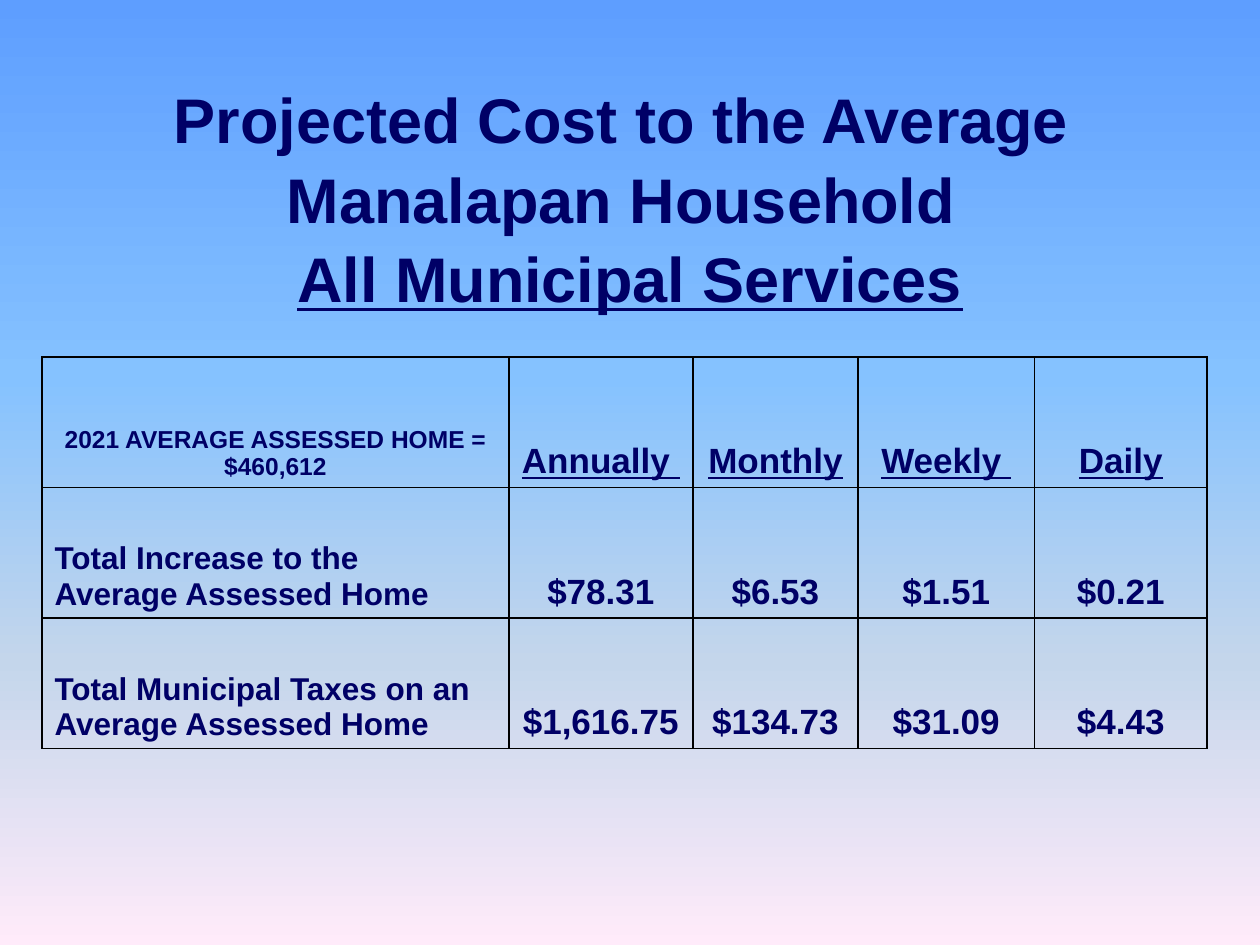
from lxml.etree import SubElement
from pptx import Presentation
from pptx.dml.color import RGBColor
from pptx.enum.text import MSO_ANCHOR as Anchor, PP_ALIGN as Align
from pptx.oxml.ns import qn
from pptx.util import Pt

FONT = "Arial"
NAVY = "000066"
BLACK = "000000"
STOPS = [(0, "5E9EFF"), (40, "85C2FF"), (70, "C4D6EB"), (100, "FFEBFA")]
TITLE = [
    ("Projected Cost to the Average ", False),
    ("Manalapan Household ", False),
    ("All Municipal Services", True),
]
HOME = "2021 AVERAGE ASSESSED HOME = $460,612"
PERIODS = ["Annually ", "Monthly", "Weekly ", "Daily"]
COSTS = [
    (["Total Increase to the", "Average Assessed Home"],
     ["$78.31", "$6.53", "$1.51", "$0.21"]),
    (["Total Municipal Taxes on an", "Average Assessed Home"],
     ["$1,616.75", "$134.73", "$31.09", "$4.43"]),
]
COL_WIDTHS = [266.8, 105.1, 94.5, 100.7, 98.8]
ROW_HEIGHT = 74.6


def rgb(color):
    return RGBColor.from_string(color)


def add_run(p, text, size, underline=False):
    r = p.add_run()
    r.text = text
    r.font.name = FONT
    r.font.size = Pt(size)
    r.font.bold = True
    r.font.underline = underline
    r.font.color.rgb = rgb(NAVY)


def add_paragraphs(tf, lines, size, align=Align.CENTER):
    for i, (text, underline) in enumerate(lines):
        p = tf.add_paragraph() if i else tf.paragraphs[0]
        p.alignment = align
        add_run(p, text, size, underline)


def set_background(s):
    fill = s.background.fill
    fill.gradient()
    fill.gradient_angle = 270
    stops = s.element.find(".//" + qn("a:gsLst"))
    for old in list(stops):
        stops.remove(old)
    for pos, color in STOPS:
        gs = SubElement(stops, qn("a:gs"), pos=str(pos * 1000))
        SubElement(gs, qn("a:srgbClr"), val=color)


def add_title(s):
    sp = s.shapes.add_textbox(Pt(36), Pt(45), Pt(648), Pt(134))
    tf = sp.text_frame
    tf.word_wrap = True
    tf.vertical_anchor = Anchor.MIDDLE
    add_paragraphs(tf, TITLE, 36)
    for p in tf.paragraphs:
        p.line_spacing = 1.05


def set_borders(cell):
    tc_pr = cell._tc.get_or_add_tcPr()
    for i, side in enumerate(("lnL", "lnR", "lnT", "lnB")):
        ln = tc_pr.makeelement(qn("a:" + side), {"w": str(Pt(1))})
        fill = SubElement(ln, qn("a:solidFill"))
        SubElement(fill, qn("a:srgbClr"), val=BLACK)
        tc_pr.insert(i, ln)


def fill_cell(cell, lines, size, align=Align.CENTER, underline=False):
    cell.vertical_anchor = Anchor.BOTTOM
    cell.fill.background()
    set_borders(cell)
    add_paragraphs(cell.text_frame, [(t, underline) for t in lines], size, align)


def add_cost_table(s):
    n_rows = len(COSTS) + 1
    frame = s.shapes.add_table(n_rows, len(COL_WIDTHS), Pt(24), Pt(204),
                               Pt(sum(COL_WIDTHS)), Pt(n_rows * ROW_HEIGHT))
    table = frame.table
    table.first_row = False
    table.horz_banding = False
    for col, width in zip(table.columns, COL_WIDTHS):
        col.width = Pt(width)
    for row in table.rows:
        row.height = Pt(ROW_HEIGHT)

    fill_cell(table.cell(0, 0), [HOME], 14)
    for j, period in enumerate(PERIODS, 1):
        fill_cell(table.cell(0, j), [period], 20, underline=True)
    for i, (label, amounts) in enumerate(COSTS, 1):
        fill_cell(table.cell(i, 0), label, 18, Align.LEFT)
        for j, amount in enumerate(amounts, 1):
            fill_cell(table.cell(i, j), [amount], 20)


def main():
    prs = Presentation()
    prs.slide_width = Pt(720)
    prs.slide_height = Pt(540)
    s = prs.slides.add_slide(prs.slide_layouts[6])
    set_background(s)
    add_title(s)
    add_cost_table(s)
    prs.save("out.pptx")


if __name__ == "__main__":
    main()
